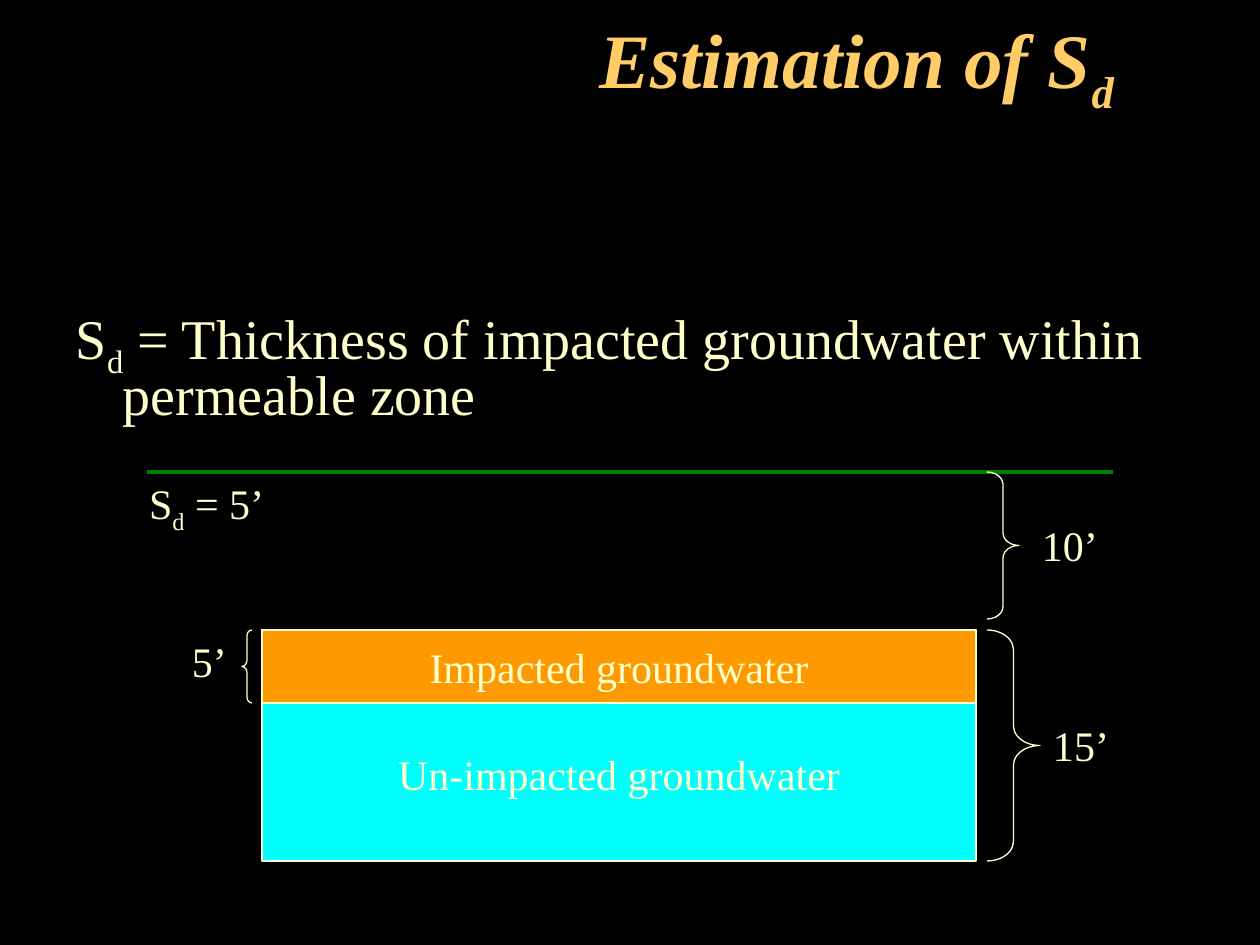
"""Build the slide that explains how S_d is estimated."""
from lxml.etree import SubElement
from pptx import Presentation
from pptx.dml.color import RGBColor
from pptx.enum.shapes import MSO_CONNECTOR, MSO_SHAPE
from pptx.enum.text import MSO_ANCHOR, MSO_AUTO_SIZE, PP_ALIGN
from pptx.oxml.ns import qn
from pptx.util import Emu, Pt

FONT = "Times New Roman"
CREAM, GOLD, GREEN = "FFFFCC", "FFCC66", "008000"
ORANGE, CYAN, BLACK = "FF9900", "00FFFF", "000000"
LAYER_LEFT, LAYER_TOP, LAYER_WIDTH = 262, 630, 714
IMPACTED_HEIGHT, AQUIFER_HEIGHT = 73, 231
GROUND_Y, BRACE_LEFT = 472, 987


def px(n):
    return Emu(round(n * 914400 / 126))


def box(*lengths):
    return [px(n) for n in lengths]


def paint(color_format, color):
    color_format.rgb = RGBColor.from_string(color)


def place(shape, left, top, width, height):
    shape.left, shape.top, shape.width, shape.height = box(left, top, width, height)


def write(shape, parts, size=24, color=CREAM, align=PP_ALIGN.LEFT,
          anchor=MSO_ANCHOR.TOP, insets=(13, 6, 13, 6), wrap=False):
    """Fill a shape with one paragraph whose every second part is a subscript."""
    tf = shape.text_frame
    tf.word_wrap = wrap
    tf.auto_size = MSO_AUTO_SIZE.NONE
    tf.vertical_anchor = anchor
    tf.margin_left, tf.margin_top, tf.margin_right, tf.margin_bottom = box(*insets)
    p = tf.paragraphs[0]
    p.alignment = align
    for i, part in enumerate(parts):
        r = p.add_run()
        r.text = part
        r.font.name, r.font.size = FONT, Pt(size)
        paint(r.font.color, color)
        if i % 2:
            r.font._element.set("baseline", "-25000")
    return p


def add_title(s, parts):
    title = s.shapes.title
    place(title, 94, 53, 1071, 158)
    p = write(title, parts, 44, GOLD, PP_ALIGN.RIGHT, MSO_ANCHOR.BOTTOM,
              (13, 6, 51, 94), True)
    for r in p.runs:
        r.font.bold = r.font.italic = True


def add_definition(s, parts):
    sp = s.shapes.add_textbox(*box(63, 294, 1197, 567))
    p = write(sp, parts, 32, insets=(13, 17, 13, 6), wrap=True)
    p.line_spacing = 0.8
    pPr = p._p.get_or_add_pPr()
    pPr.set("marL", str(px(47)))
    pPr.set("indent", str(px(-47)))


def add_label(s, left, top, width, parts):
    write(s.shapes.add_textbox(*box(left, top, width, 63)), parts)


def add_outlined(s, kind, left, top, width, height):
    sp = s.shapes.add_shape(kind, *box(left, top, width, height))
    sp.shadow.inherit = False
    sp.fill.background()
    paint(sp.line.color, CREAM)
    sp.line.width = Pt(0.75)
    return sp


def add_layer(s, height, color, text, top_inset=6):
    sp = add_outlined(s, MSO_SHAPE.RECTANGLE, LAYER_LEFT, LAYER_TOP, LAYER_WIDTH, height)
    sp.fill.solid()
    paint(sp.fill.fore_color, color)
    write(sp, [text], align=PP_ALIGN.CENTER, anchor=MSO_ANCHOR.MIDDLE,
          insets=(13, top_inset, 13, 6))


def add_brace(s, kind, left, top, width, height, curve):
    sp = add_outlined(s, kind, left, top, width, height)
    sp.adjustments[0], sp.adjustments[1] = curve, 0.5


def add_ground(s, left, right):
    line = s.shapes.add_connector(MSO_CONNECTOR.STRAIGHT,
                                  *box(left, GROUND_Y, right, GROUND_Y))
    paint(line.line.color, GREEN)
    line.line.width = Pt(2.25)
    SubElement(line._element.spPr, qn("a:effectLst"))


def main():
    prs = Presentation()
    prs.slide_width, prs.slide_height = box(1260, 945)
    s = prs.slides.add_slide(prs.slide_layouts[5])
    s.background.fill.solid()
    paint(s.background.fill.fore_color, BLACK)

    add_title(s, ["Estimation of S", "d"])
    add_definition(s, ["S", "d", " = Thickness of impacted groundwater within permeable zone"])
    add_layer(s, AQUIFER_HEIGHT, CYAN, "Un-impacted groundwater", 62)
    add_ground(s, 147, 1113)
    add_brace(s, MSO_SHAPE.RIGHT_BRACE, BRACE_LEFT, LAYER_TOP, 53, AQUIFER_HEIGHT, 0.37)
    add_brace(s, MSO_SHAPE.RIGHT_BRACE, BRACE_LEFT, GROUND_Y, 32, 147, 0.39)
    add_label(s, 1029, 514, 82, ["10’"])
    add_label(s, 1040, 714, 82, ["15’"])
    add_layer(s, IMPACTED_HEIGHT, ORANGE, "Impacted groundwater")
    add_brace(s, MSO_SHAPE.LEFT_BRACE, 242, LAYER_TOP, 10, IMPACTED_HEIGHT, 0.58)
    add_label(s, 179, LAYER_TOP, 60, ["5’"])
    add_label(s, 136, GROUND_Y, 142, ["S", "d", " = 5’"])
    prs.save("out.pptx")


if __name__ == "__main__":
    main()
